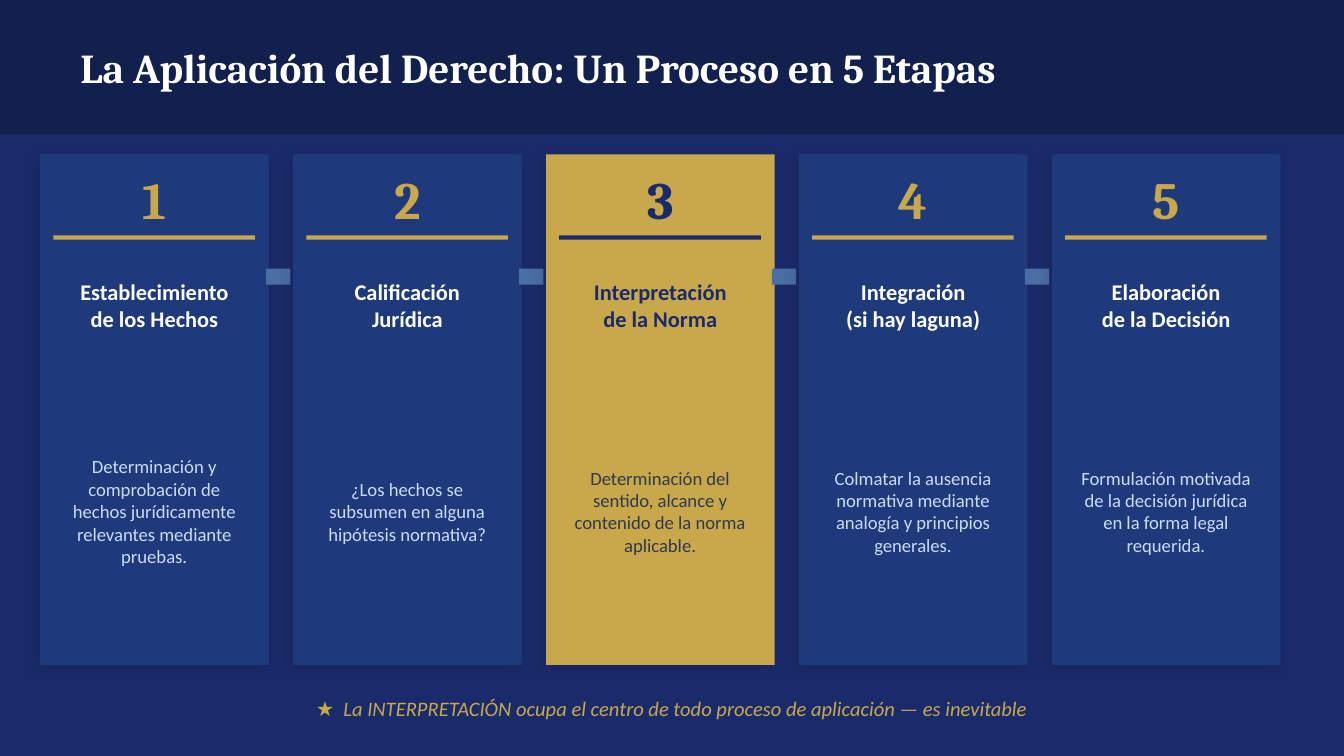
"""Build a slide on the five stages of applying the law."""
from lxml import etree
from pptx import Presentation
from pptx.dml.color import RGBColor
from pptx.enum.shapes import MSO_SHAPE
from pptx.enum.text import MSO_ANCHOR, PP_ALIGN
from pptx.oxml import parse_xml
from pptx.util import Cm, Pt

NAVY, GOLD, BLUE, WHITE = "1A2B6B", "C9A84C", "1E3A7A", "FFFFFF"
SHADOW = (
    '<a:effectLst xmlns:a="http://schemas.openxmlformats.org/drawingml/2006/main">'
    '<a:outerShdw blurRad="101600" dist="38100" dir="8100000" algn="bl" rotWithShape="0">'
    '<a:srgbClr val="000000"><a:alpha val="13000"/></a:srgbClr>'
    '</a:outerShdw></a:effectLst>'
)


def add_rect(x, y, w, h, color, shadow=False):
    sp = s.shapes.add_shape(MSO_SHAPE.RECTANGLE, Cm(x), Cm(y), Cm(w), Cm(h))
    sp.fill.solid()
    sp.fill.fore_color.rgb = RGBColor.from_string(color)
    sp.line.fill.background()
    if shadow:
        sp._element.spPr.append(parse_xml(SHADOW))
    else:
        sp.shadow.inherit = False


def add_text(text, x, y, w, h, size, color, font="Calibri", bold=False,
             italic=False, align=PP_ALIGN.CENTER, inset=True):
    tf = s.shapes.add_textbox(Cm(x), Cm(y), Cm(w), Cm(h)).text_frame
    tf.word_wrap = True
    tf.vertical_anchor = MSO_ANCHOR.MIDDLE
    if not inset:
        tf.margin_left = tf.margin_right = tf.margin_top = tf.margin_bottom = 0
    for i, line in enumerate(text.split("\n")):
        p = tf.paragraphs[0] if i == 0 else tf.add_paragraph()
        p.alignment = align
        r = p.add_run()
        r.text = line
        r.font.name = font
        r.font.size = Pt(size)
        r.font.bold = bold
        r.font.italic = italic
        r.font.color.rgb = RGBColor.from_string(color)


prs = Presentation()
prs.slide_width, prs.slide_height = Cm(25.4), Cm(14.29)
s = prs.slides.add_slide(prs.slide_layouts[6])
s.background.fill.solid()
s.background.fill.fore_color.rgb = RGBColor.from_string(NAVY)

add_rect(0, 0, 25.4, 2.54, "12204E")
add_text("La Aplicación del Derecho: Un Proceso en 5 Etapas", 1.27, 0.38, 22.86, 1.78,
         22, WHITE, font="Cambria", bold=True, align=PP_ALIGN.LEFT)

stages = [
    ("Establecimiento\nde los Hechos",
     "Determinación y comprobación de hechos jurídicamente relevantes mediante pruebas."),
    ("Calificación\nJurídica",
     "¿Los hechos se subsumen en alguna hipótesis normativa?"),
    ("Interpretación\nde la Norma",
     "Determinación del sentido, alcance y contenido de la norma aplicable."),
    ("Integración\n(si hay laguna)",
     "Colmatar la ausencia normativa mediante analogía y principios generales."),
    ("Elaboración\nde la Decisión",
     "Formulación motivada de la decisión jurídica en la forma legal requerida."),
]
left, pitch, width = 0.76, 4.78, 4.32
for i, (name, detail) in enumerate(stages):
    x = left + i * pitch
    if i == 2:
        card, accent, heading, body = GOLD, NAVY, NAVY, "2D3A4A"
    else:
        card, accent, heading, body = BLUE, GOLD, WHITE, "CADCFC"
    add_rect(x, 2.92, width, 9.65, card, shadow=True)
    add_text(str(i + 1), x, 3.05, width, 1.4, 28, accent,
             font="Cambria", bold=True, inset=False)
    add_rect(x + 0.25, 4.45, 3.81, 0.08, accent)
    add_text(name, x + 0.13, 4.62, 4.06, 2.29, 12, heading, bold=True)
    add_text(detail, x + 0.25, 7.06, 3.81, 5.21, 10, body)
    if i < len(stages) - 1:
        add_rect(x + 4.27, 5.08, 0.46, 0.3, "4A6FA5")

add_text("★  La INTERPRETACIÓN ocupa el centro de todo proceso de aplicación — es inevitable",
         1.27, 12.95, 22.86, 0.89, 11, GOLD, italic=True)

prs.save("out.pptx")
